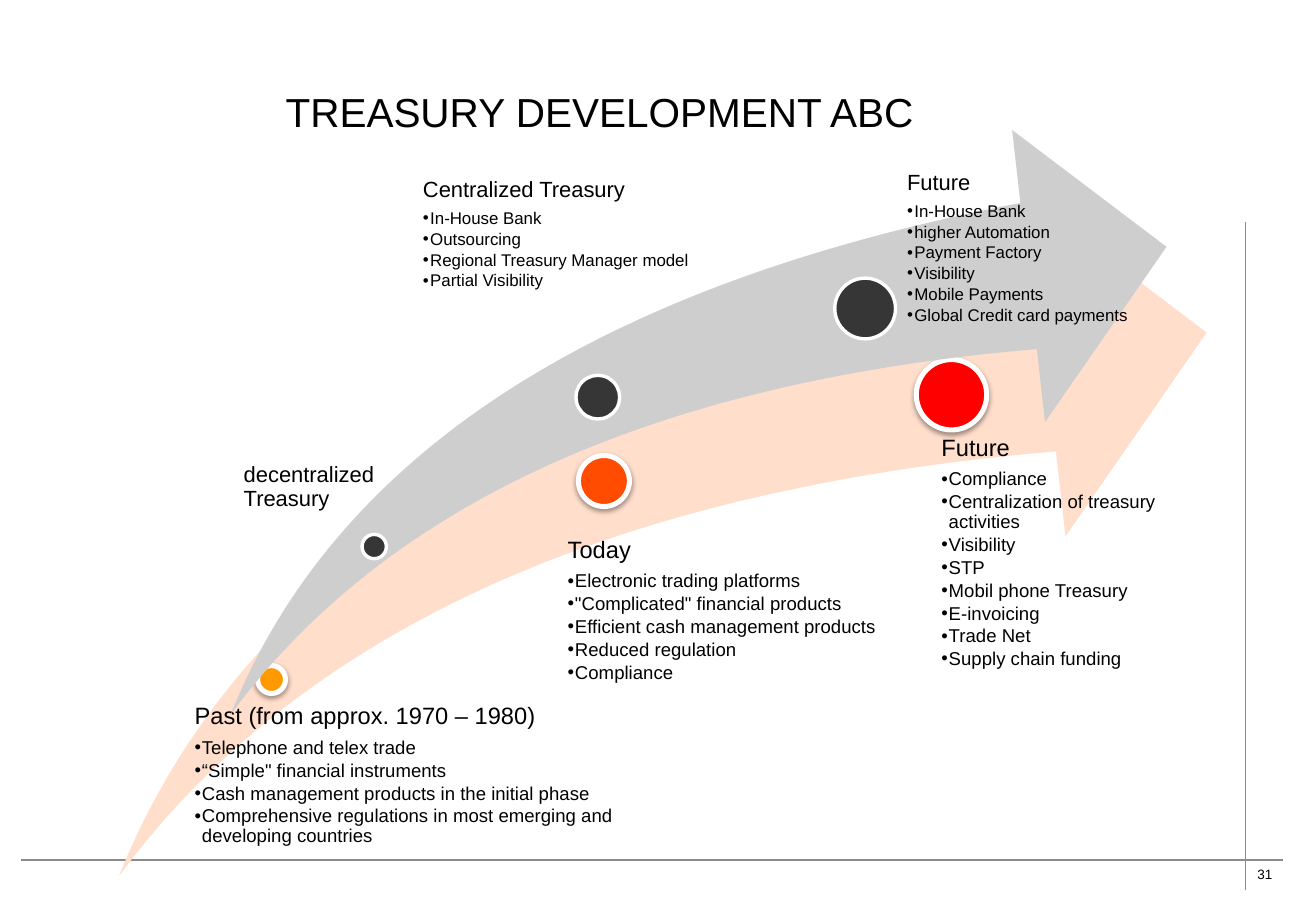
import pptx
import pptx.dml.color
import pptx.enum.shapes
import pptx.enum.text
import pptx.oxml
import pptx.oxml.ns
import pptx.util
from dataclasses import dataclass
from lxml import etree

Inches = pptx.util.Inches
Pt = pptx.util.Pt
Shape = pptx.enum.shapes.MSO_SHAPE


@dataclass(frozen=True)
class Theme:
    """Hold the colours and type sizes of the slide."""
    font: str = "Arial"
    ink: str = "000000"
    white: str = "FFFFFF"
    rule: str = "8B8B8B"
    peach: str = "FFDECC"
    silver: str = "CECECE"
    dark: str = "363636"
    amber: str = "FF9900"
    orange: str = "FF4C00"
    red: str = "FF0000"
    title: int = 24
    number: int = 8


THEME = Theme()

MARKET = [
    (1.14, 3.86, 0.23, THEME.amber, (0.5, 4.18, 3.59, 1.29), "Past (from approx. 1970 – 1980)",
     ["Telephone and telex trade", "“Simple\" financial instruments",
      "Cash management products in the initial phase",
      "Comprehensive regulations in most emerging and developing countries"]),
    (3.78, 2.13, 0.42, THEME.orange, (3.47, 2.81, 3.8, 2.63), "Today",
     ["Electronic trading platforms", "\"Complicated\" financial products",
      "Efficient cash management products", "Reduced regulation", "Compliance"]),
    (6.56, 1.34, 0.58, THEME.red, (6.46, 1.97, 2.15, 2.31), "Future",
     ["Compliance", "Centralization of treasury activities", "Visibility", "STP",
      "Mobil phone Treasury", "E-invoicing", "Trade Net", "Supply chain funding"]),
]

COMPANY = [
    (1.08, 3.33, 0.2, THEME.dark, (0, 2.75, 1.79, 0.44), "decentralized Treasury", []),
    (2.84, 2.02, 0.36, THEME.dark, (1.39, 0.4, 3.5, 1.78), "Centralized Treasury",
     ["In-House Bank", "Outsourcing", "Regional Treasury Manager model", "Partial Visibility"]),
    (4.97, 1.22, 0.5, THEME.dark, (5.3, 0.34, 3.02, 1.47), "Future",
     ["In-House Bank", "higher Automation", "Payment Factory", "Visibility",
      "Mobile Payments", "Global Credit card payments"]),
]


def tint(code):
    """Turn a hex code into a colour."""
    return pptx.dml.color.RGBColor.from_string(code)


def style(para, size):
    """Format the runs of a paragraph."""
    for run in para.runs:
        run.font.name = THEME.font
        run.font.size = Pt(size)
        run.font.color.rgb = tint(THEME.ink)


def solid(slide, kind, box, fill):
    """Add a filled shape with no line or shadow."""
    shape = slide.shapes.add_shape(kind, *map(Inches, box))
    shape.shadow.inherit = False
    shape.fill.solid()
    shape.fill.fore_color.rgb = tint(fill)
    shape.line.fill.background()
    return shape


def shade(shape):
    """Give a shape a soft shadow below it."""
    effects = shape._element.spPr.find(pptx.oxml.ns.qn("a:effectLst"))
    effects.append(pptx.oxml.parse_xml(
        f'<a:outerShdw {pptx.oxml.ns.nsdecls("a")} blurRad="{Pt(3.1)}" dist="{Pt(1.6)}" '
        'dir="5400000" rotWithShape="0"><a:srgbClr val="000000"><a:alpha val="38000"/>'
        '</a:srgbClr></a:outerShdw>'))


def bullet(para):
    """Give a paragraph a hanging bullet."""
    para.level = 1
    props = para._p.get_or_add_pPr()
    props.set("marL", str(Inches(0.06)))
    props.set("indent", str(Inches(-0.06)))
    for tag, key, value in (("a:buFont", "typeface", THEME.font), ("a:buChar", "char", "•")):
        etree.SubElement(props, pptx.oxml.ns.qn(tag)).set(key, value)


def label(slide, box, inset, head, items, sizes):
    """Add a heading with its bullet list."""
    frame = slide.shapes.add_textbox(*map(Inches, box)).text_frame
    frame.word_wrap = True
    frame.margin_left = Inches(inset)
    frame.margin_top = frame.margin_right = frame.margin_bottom = 0
    for order, text in enumerate([head, *items]):
        para = frame.add_paragraph() if order else frame.paragraphs[0]
        para.text = text
        size, gap = (sizes[1], 0.15) if order else (sizes[0], 0.35)
        if order:
            bullet(para)
        para.line_spacing = 0.9
        para.space_after = Pt(round(size * gap, 2))
        para.font.size = Pt(size)
        style(para, size)


def swoosh(slide, box, fill, stages, sizes, edge, raised):
    """Draw a curved arrow with its stages placed from the corner of its box."""
    left, top = box[:2]
    arrow = solid(slide, Shape.SWOOSH_ARROW, box, fill)
    arrow.adjustments[0] = arrow.adjustments[1] = 0.25
    for x, y, size, color, (dx, dy, wide, high), head, items in stages:
        dot = solid(slide, Shape.OVAL, (left + x, top + y, size, size), color)
        dot.line.color.rgb = tint(THEME.white)
        dot.line.width = Pt(edge)
        if raised:
            shade(dot)
        label(slide, (left + dx, top + dy, wide, high), 0.53 * size, head, items, sizes)


def rule(slide, start, end):
    """Draw a thin grey line."""
    line = slide.shapes.add_connector(pptx.enum.shapes.MSO_CONNECTOR.STRAIGHT,
                                      *map(Inches, (*start, *end)))
    line.line.color.rgb = tint(THEME.rule)
    line.line.width = Pt(1)
    etree.SubElement(line._element.spPr, pptx.oxml.ns.qn("a:effectLst"))


def margin(slide, box, number):
    """Draw the crossing rules and the page number at their corner."""
    left, top, wide, high = box
    rule(slide, (0.17, top), (10.56, top))
    rule(slide, (left, 7.33), (left, 1.83))
    frame = slide.shapes.add_textbox(*map(Inches, box)).text_frame
    frame.word_wrap = False
    frame.text = number
    style(frame.paragraphs[0], THEME.number)


def heading(slide, box, text):
    """Place and format the title."""
    title = slide.shapes.title
    title.left, title.top, title.width, title.height = map(Inches, box)
    frame = title.text_frame
    frame.text = text
    frame.vertical_anchor = pptx.enum.text.MSO_ANCHOR.MIDDLE
    frame.paragraphs[0].alignment = pptx.enum.text.PP_ALIGN.LEFT
    style(frame.paragraphs[0], THEME.title)


def main():
    """Build and save the slide."""
    deck = pptx.Presentation()
    deck.slide_width, deck.slide_height = Inches(10.83), Inches(7.5)
    slide = deck.slides.add_slide(deck.slide_layouts[5])
    heading(slide, (2.25, 0.42, 7.83, 1), "TREASURY DEVELOPMENT ABC")
    margin(slide, (10.25, 7.08, 0.34, 0.23), "31")
    swoosh(slide, (0.98, 1.62, 8.95, 5.59), THEME.peach, MARKET, (14, 11), 3, True)
    swoosh(slide, (1.9, 1.07, 7.7, 4.81), THEME.silver, COMPANY, (13, 10), 2, False)
    deck.save("out.pptx")


if __name__ == "__main__":
    main()
